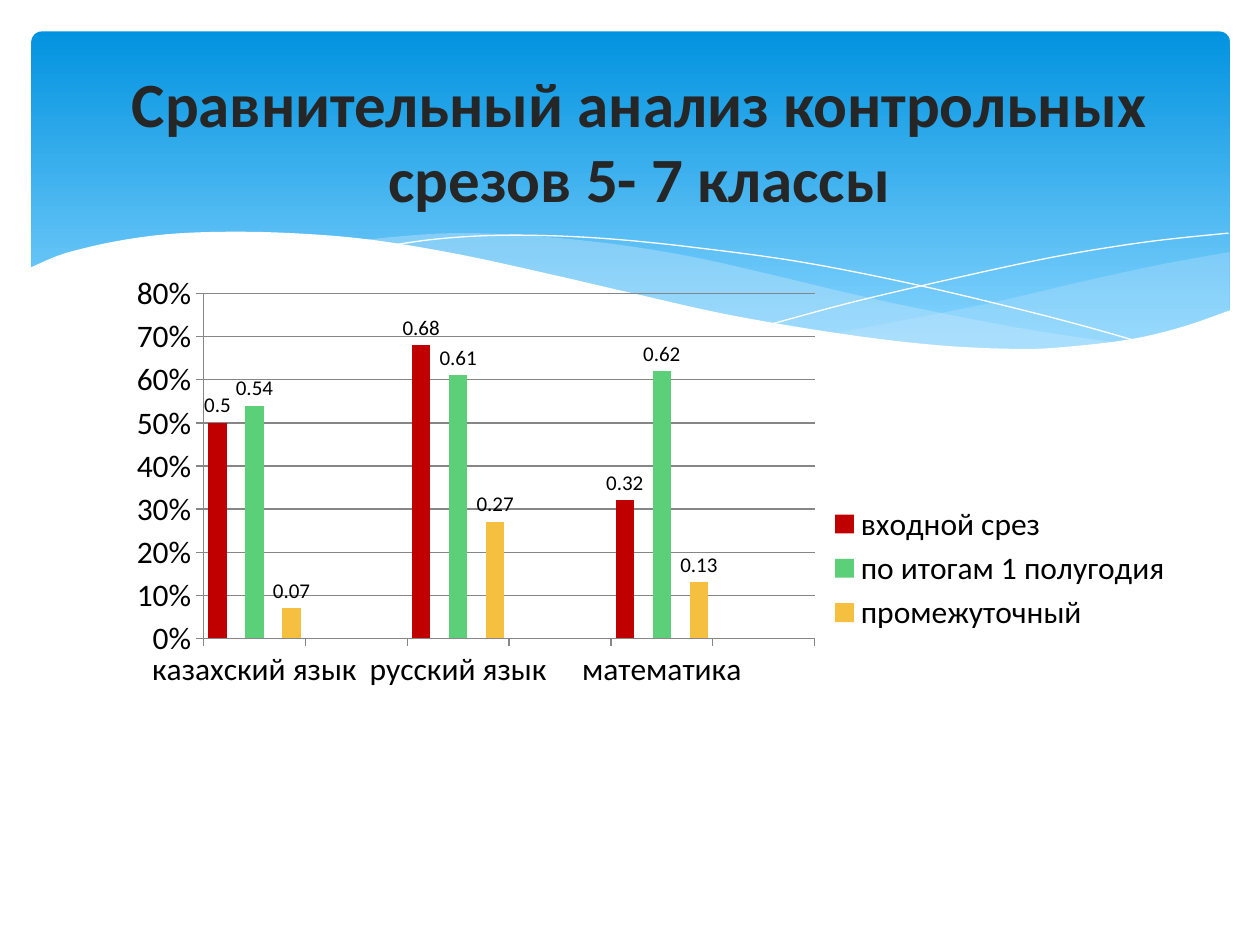
from dataclasses import dataclass

from lxml.etree import SubElement
from pptx import Presentation
from pptx.chart.data import CategoryChartData
from pptx.dml.color import RGBColor
from pptx.enum.chart import XL_CHART_TYPE as ChartType
from pptx.enum.chart import XL_LABEL_POSITION as LabelPosition
from pptx.enum.chart import XL_LEGEND_POSITION as LegendPosition
from pptx.enum.chart import XL_TICK_MARK as TickMark
from pptx.enum.shapes import MSO_SHAPE as Shape
from pptx.enum.text import MSO_ANCHOR as Anchor
from pptx.enum.text import PP_ALIGN as Align
from pptx.oxml.ns import qn
from pptx.util import Inches, Pt


@dataclass(frozen=True)
class Theme:
    font: str = "Calibri"
    title_size: int = 36
    chart_size: int = 18
    label_size: int = 12
    title: str = "262626"
    text: str = "000000"
    paper: str = "FFFFFF"
    banner_top: str = "0293E0"
    banner_bottom: str = "83D3FE"
    wave: str = "C6E7FC"
    grid: str = "868686"


THEME = Theme()

# The slide is a grid of 100 columns by 75 rows
WIDTH, HEIGHT = Inches(10), Inches(7.5)
COL, ROW = WIDTH / 100, HEIGHT / 75

BANNER_BOX = (2.5, 2.5, 95.1, 27)
CHART_BOX = (7.5, 21.8, 86.6, 46.5)
TITLE_BOX = (5.1, 4.4, 91.3, 13.4)

# Wave edges in columns and rows; each list is one smooth run
RIGHT_WAVE = [
    [(97.6, 20), (92.1, 21), (86.1, 22.3), (77.9, 24.2), (66.1, 26.5)],
    [(66.1, 26.5), (71.9, 27.2), (76.9, 27.7), (81.4, 27.8), (86.3, 27.5),
     (91.3, 26.7), (94.9, 25.7), (97.6, 24.7)],
]
MIDDLE_WAVE = [
    [(89.3, 27.3), (80.7, 26), (70.6, 24), (62.9, 22.2)],
    [(62.9, 22.2), (55.5, 20.5), (48.9, 19.4), (42, 18.7), (36.1, 18.5),
     (31.3, 18.8), (28.6, 19.1)],
    [(28.6, 19.1), (34.2, 19.9), (40.4, 21.1), (44.9, 22.2)],
    [(44.9, 22.2), (53, 24), (60.1, 25.5), (66.5, 26.6), (72.2, 27.4),
     (77.3, 27.7), (81.8, 27.8), (85.7, 27.7), (89.3, 27.3)],
]
FALLING_LINE = [
    [(30.9, 19.5), (34.4, 19), (38.7, 18.7), (43.3, 18.7), (48.9, 19),
     (55.6, 19.7), (63.6, 20.8), (72.7, 22.6), (83.1, 25.1), (90.7, 27.2)],
]
RISING_LINE = [
    [(61.3, 25.7), (67.2, 24.1), (74.8, 22.3), (83.6, 20.4), (91, 19.2),
     (97.5, 18.5)],
]
PAPER_WAVE = [
    [(97.7, 24.6), (94, 25.9), (89.9, 26.9), (85, 27.5), (80.9, 27.7),
     (74.4, 27.4), (66.8, 26.5), (57.9, 25), (50.3, 23.3), (44.7, 22)],
    [(44.7, 22), (36.5, 20.2), (29.2, 19), (23, 18.5), (17.7, 18.4),
     (13.2, 18.6), (9.5, 19.1), (6.7, 19.7), (4.6, 20.3), (2.3, 21.3)],
    [(2.3, 32.9), (97.7, 32.9)],
]

SUBJECTS = ["казахский язык", "", "русский язык", "", "математика", ""]
# Name, values by subject, colour; series without values are spacers
TESTS = [
    ("входной срез", (0.5, 0.68, 0.32), "C00000"),
    ("Series 2", None, "4584D3"),
    ("по итогам 1 полугодия", (0.54, 0.61, 0.62), "5BD078"),
    ("Series 4", None, "A5D028"),
    ("промежуточный", (0.07, 0.27, 0.13), "F5C040"),
]
# The plot ends just left of the legend keys
PLOT_SHARES = {"x": 0.1, "y": 0.03, "w": 0.56, "h": 0.59}


def rgb(value):
    return RGBColor.from_string(value)


def emu_box(box):
    left, top, width, height = box
    return [round(v) for v in (left * COL, top * ROW, width * COL, height * ROW)]


def format_font(font, *, size, color, bold=False):
    font.name, font.size, font.bold = THEME.font, Pt(size), bold
    font.color.rgb = rgb(color)


def write_text(frame, text, *, align=Align.LEFT, anchor=Anchor.TOP, **font):
    frame.word_wrap, frame.vertical_anchor = True, anchor
    paragraph = frame.paragraphs[0]
    paragraph.alignment = align
    run = paragraph.add_run()
    run.text = text
    format_font(run.font, **font)


def smooth(points, steps=5):
    """Catmull-Rom curve through the points."""
    padded = [points[0], *points, points[-1]]
    curve = [points[0]]
    for a, b, c, d in zip(padded, padded[1:], padded[2:], padded[3:]):
        for step in range(1, steps + 1):
            t = step / steps
            curve.append(tuple(
                (2 * q + (r - p) * t + (2 * p - 5 * q + 4 * r - s) * t ** 2
                 + (3 * q - p - 3 * r + s) * t ** 3) / 2
                for p, q, r, s in zip(a, b, c, d)))
    return curve


def add_wave(slide, runs, *, fill=None, opacity=None, line=None):
    points = [(x * COL, y * ROW) for run in runs for x, y in smooth(run)]
    builder = slide.shapes.build_freeform(*map(round, points[0]))
    builder.add_line_segments(points[1:], close=fill is not None)
    wave = builder.convert_to_shape()
    wave.shadow.inherit = False
    if fill:
        wave.fill.solid()
        wave.fill.fore_color.rgb = rgb(fill)
    else:
        wave.fill.background()
    if opacity:
        color = wave.element.spPr.find(".//" + qn("a:srgbClr"))
        SubElement(color, qn("a:alpha"), val=str(opacity * 1000))
    if line:
        wave.line.color.rgb = rgb(line)
        wave.line.width = Pt(0)
    else:
        wave.line.fill.background()


def add_banner(slide, box):
    # Gradient panel
    panel = slide.shapes.add_shape(Shape.ROUNDED_RECTANGLE, *emu_box(box))
    panel.adjustments[0] = 0.03
    panel.shadow.inherit = False
    panel.line.fill.background()
    panel.fill.gradient()
    panel.fill.gradient_angle = 270
    stops = panel.fill.gradient_stops
    for stop, position, color in zip(
            stops, (0, 0.9), (THEME.banner_top, THEME.banner_bottom)):
        stop.position, stop.color.rgb = position, rgb(color)

    # Waves along the lower edge
    add_wave(slide, RIGHT_WAVE, fill=THEME.wave, opacity=29)
    add_wave(slide, MIDDLE_WAVE, fill=THEME.wave, opacity=40)
    add_wave(slide, FALLING_LINE, line=THEME.paper)
    add_wave(slide, RISING_LINE, line=THEME.paper)
    add_wave(slide, PAPER_WAVE, fill=THEME.paper)


def set_plot_area(chart, shares):
    plot_area = chart.element.find(".//" + qn("c:plotArea"))
    layout = plot_area.find(qn("c:layout"))
    if layout is None:
        layout = plot_area.makeelement(qn("c:layout"))
        plot_area.insert(0, layout)
    manual = SubElement(layout, qn("c:manualLayout"))
    settings = {"layoutTarget": "inner", "xMode": "edge", "yMode": "edge", **shares}
    for tag, value in settings.items():
        SubElement(manual, qn("c:" + tag), val=str(value))


def hide_legend_entries(legend, indexes):
    for place, index in enumerate(indexes, start=1):
        entry = legend._element.makeelement(qn("c:legendEntry"))
        SubElement(entry, qn("c:idx"), val=str(index))
        SubElement(entry, qn("c:delete"), val="1")
        legend._element.insert(place, entry)


def add_results_chart(slide, box):
    data = CategoryChartData()
    data.categories = SUBJECTS
    for name, results, _ in TESTS:
        data.add_series(name, [v for r in results or [None] * 3 for v in (r, None)])
    chart = slide.shapes.add_chart(
        ChartType.COLUMN_CLUSTERED, *emu_box(box), data).chart
    chart.has_title = False
    format_font(chart.font, size=THEME.chart_size, color=THEME.text)
    set_plot_area(chart, PLOT_SHARES)

    # Columns, spaced so that each label stays clear of its neighbours
    plot = chart.plots[0]
    plot.gap_width, plot.overlap, plot.vary_by_categories = 50, 0, False
    for series, (_, results, color) in zip(plot.series, TESTS):
        series.format.fill.solid()
        series.format.fill.fore_color.rgb = rgb(color)
        if results:
            labels = series.data_labels
            format_font(labels.font, size=THEME.label_size, color=THEME.text)
            labels.show_value, labels.position = True, LabelPosition.OUTSIDE_END

    # Axes
    percent = chart.value_axis
    percent.minimum_scale, percent.maximum_scale, percent.major_unit = 0, 0.8, 0.1
    percent.tick_labels.number_format = "0%"
    percent.tick_labels.number_format_is_linked = False
    percent.has_major_gridlines = True
    for axis in (percent, chart.category_axis):
        axis.major_tick_mark = TickMark.OUTSIDE
    for line in (percent.format.line, chart.category_axis.format.line,
                 percent.major_gridlines.format.line):
        line.color.rgb, line.width = rgb(THEME.grid), Pt(0.75)

    # Legend without the spacers
    chart.has_legend = True
    chart.legend.position = LegendPosition.RIGHT
    chart.legend.include_in_layout = False
    hide_legend_entries(
        chart.legend, [i for i, test in enumerate(TESTS) if test[1] is None])


def place_title(slide, box):
    title = slide.shapes.title
    title.left, title.top, title.width, title.height = emu_box(box)
    write_text(title.text_frame, "Сравнительный анализ контрольных срезов 5- 7 классы",
               align=Align.CENTER, anchor=Anchor.MIDDLE,
               size=THEME.title_size, color=THEME.title, bold=True)
    # Bring the title in front of the banner
    title.element.getparent().append(title.element)


def main():
    deck = Presentation()
    deck.slide_width, deck.slide_height = WIDTH, HEIGHT
    slide = deck.slides.add_slide(deck.slide_layouts[5])
    add_banner(slide, BANNER_BOX)
    add_results_chart(slide, CHART_BOX)
    place_title(slide, TITLE_BOX)
    deck.save("out.pptx")


if __name__ == "__main__":
    main()
